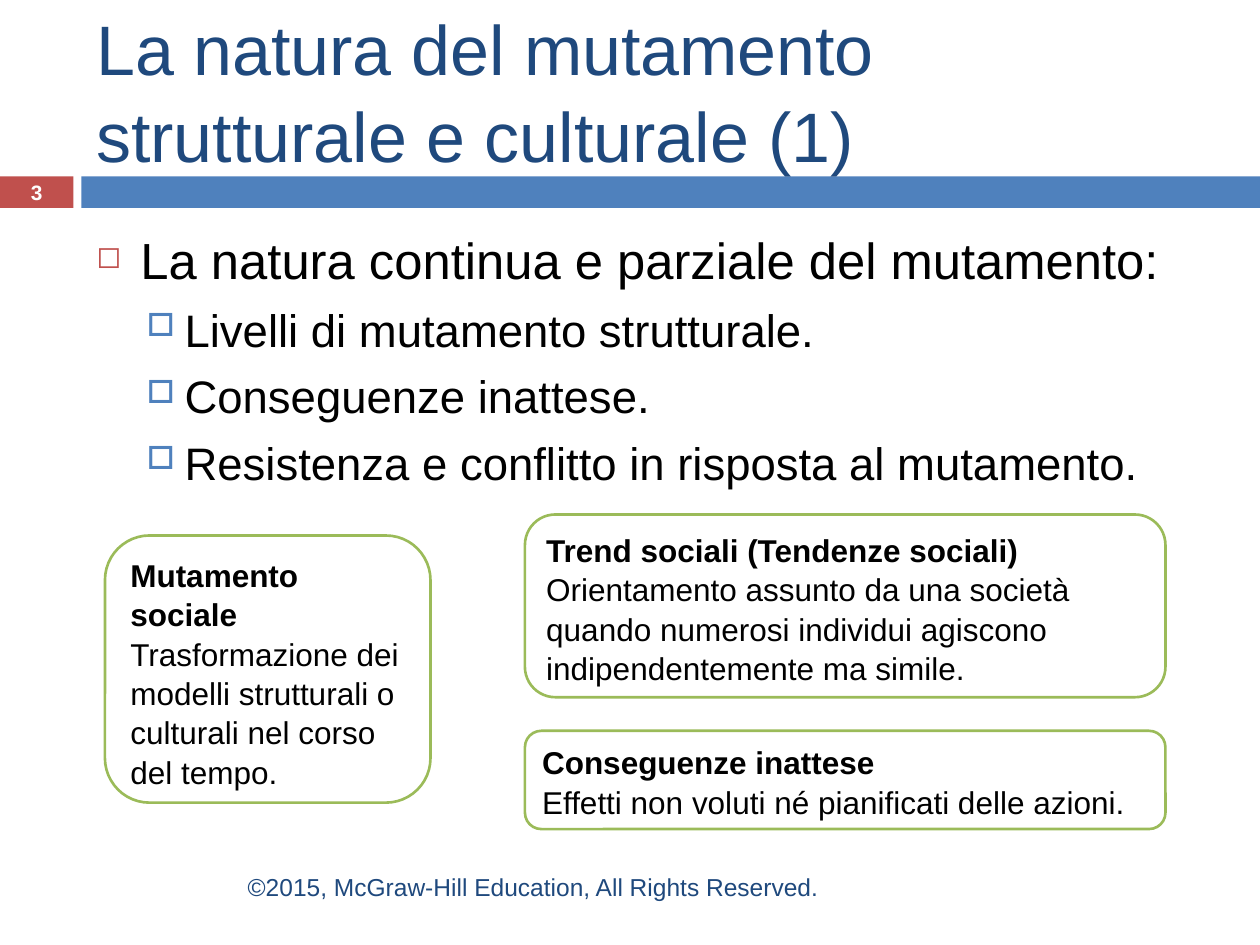
from pptx import Presentation
from pptx import util as u
from pptx.dml import color
from pptx.enum import shapes, text
from pptx.oxml import ns
from lxml import etree

RED = color.RGBColor(0xC0, 0x50, 0x4D)
BLUE = color.RGBColor(0x4F, 0x81, 0xBD)
NAVY = color.RGBColor(0x1F, 0x49, 0x7D)
GREEN = color.RGBColor(0x9B, 0xBB, 0x59)
WHITE = color.RGBColor(0xFF, 0xFF, 0xFF)
BLACK = color.RGBColor(0, 0, 0)

BULLETS = [
    ("La natura continua e parziale del mutamento:", 0),
    ("Livelli di mutamento strutturale.", 1),
    ("Conseguenze inattese.", 1),
    ("Resistenza e conflitto in risposta al mutamento.", 1),
]
LEVELS = [
    dict(size=29, margin=25.2, indent=-25.2, before=7, char="◻", color=RED, scale=60),
    dict(size=26, margin=50.4, indent=-21.6, before=5.5, char="□", color=BLUE, scale=70),
]
DEFINITIONS = [
    ((60, 306, 186, 152.64), "Mutamento sociale",
     "Trasformazione dei modelli strutturali o culturali nel corso del tempo."),
    ((300, 294, 366, 104.4), "Trend sociali (Tendenze sociali)",
     "Orientamento assunto da una società quando numerosi individui agiscono "
     "indipendentemente ma simile."),
    ((300, 417.6, 366, 56.16), "Conseguenze inattese",
     "Effetti non voluti né pianificati delle azioni."),
]


class SlideBuilder:
    font_name = "Arial"
    line_spacing = 1.045

    def __init__(self, slide):
        self.slide = slide

    def shape(self, kind, box, fill, line=None):
        shape = self.slide.shapes.add_shape(kind, *map(u.Pt, box))
        shape.shadow.inherit = False
        shape.fill.solid()
        shape.fill.fore_color.rgb = fill
        if line is None:
            shape.line.fill.background()
        else:
            shape.line.color.rgb = line
            shape.line.width = u.Pt(1.5)
        return shape

    def style(self, paragraph, size, rgb, bold=False, align=text.PP_ALIGN.LEFT):
        paragraph.alignment = align
        paragraph.line_spacing = self.line_spacing
        font = paragraph.font
        font.name, font.size, font.bold = self.font_name, u.Pt(size), bold
        font.color.rgb = rgb

    def frame(self, box, anchor=text.MSO_ANCHOR.MIDDLE):
        frame = self.slide.shapes.add_textbox(*map(u.Pt, box)).text_frame
        frame.word_wrap = True
        frame.vertical_anchor = anchor
        return frame

    def label(self, box, words, size, rgb, **style):
        paragraph = self.frame(box).paragraphs[0]
        paragraph.text = words
        self.style(paragraph, size, rgb, **style)

    def bullet(self, paragraph, level):
        properties = paragraph._p.get_or_add_pPr()
        properties.set("marL", str(u.Pt(level["margin"])))
        properties.set("indent", str(u.Pt(level["indent"])))
        tint = etree.SubElement(properties, ns.qn("a:buClr"))
        etree.SubElement(tint, ns.qn("a:srgbClr"), val=str(level["color"]))
        etree.SubElement(properties, ns.qn("a:buSzPct"), val=str(level["scale"] * 1000))
        etree.SubElement(properties, ns.qn("a:buChar"), char=level["char"])

    def bullets(self, box, items):
        frame = self.frame(box, text.MSO_ANCHOR.TOP)
        for index, (words, depth) in enumerate(items):
            level = LEVELS[depth]
            paragraph = frame.add_paragraph() if index else frame.paragraphs[0]
            paragraph.text = words
            paragraph.level = depth
            self.bullet(paragraph, level)
            self.style(paragraph, level["size"], BLACK)
            if index:
                paragraph.space_before = u.Pt(level["before"])

    def definition(self, box, term, meaning):
        shape = self.shape(shapes.MSO_SHAPE.ROUNDED_RECTANGLE, box, WHITE, GREEN)
        frame = shape.text_frame
        frame.word_wrap = True
        frame.vertical_anchor = text.MSO_ANCHOR.TOP
        heading, body = frame.paragraphs[0], frame.add_paragraph()
        heading.text, body.text = term, meaning
        self.style(heading, 18, BLACK, bold=True)
        self.style(body, 18, BLACK)


def main():
    presentation = Presentation()
    presentation.slide_width, presentation.slide_height = u.Pt(720), u.Pt(540)
    builder = SlideBuilder(presentation.slides.add_slide(presentation.slide_layouts[6]))
    rectangle = shapes.MSO_SHAPE.RECTANGLE
    builder.shape(rectangle, (0, 100.8, 42, 18), RED)
    builder.shape(rectangle, (46.5, 100.8, 673.5, 18), BLUE)
    builder.label((48, 12, 642, 78), "La natura del mutamento strutturale e culturale (1)", 40, NAVY)
    builder.bullets((48, 126, 642, 354), BULLETS)
    builder.label((0, 100, 42, 19.5), "3", 11.9, WHITE, bold=True, align=text.PP_ALIGN.CENTER)
    for definition in DEFINITIONS:
        builder.definition(*definition)
    builder.label((48, 492, 427, 28.8), "©2015, McGraw-Hill Education, All Rights Reserved.",
                  14, NAVY, align=text.PP_ALIGN.RIGHT)
    presentation.save("out.pptx")


if __name__ == "__main__":
    main()
